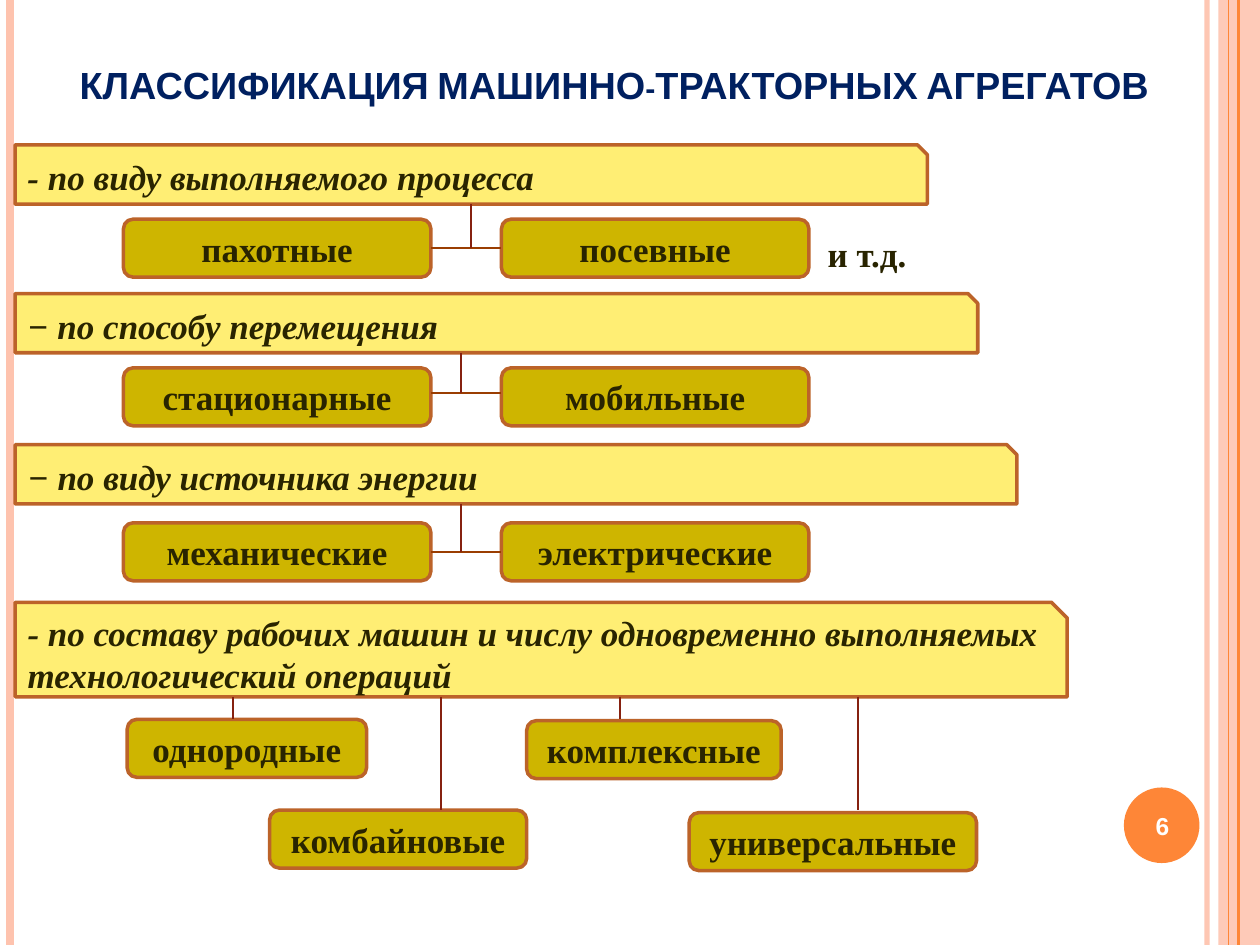
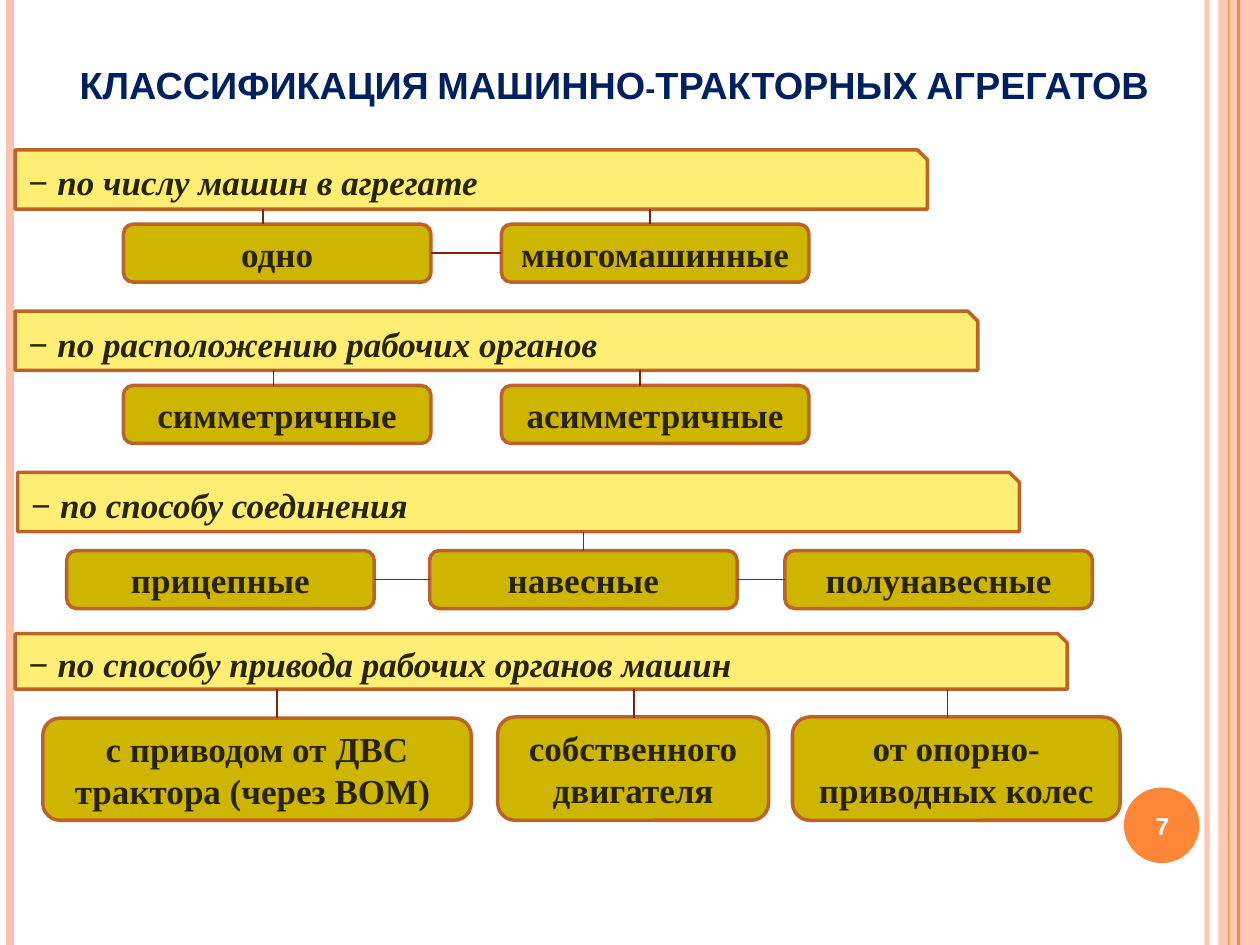
import pptx
import pptx.util
import pptx.dml.color
import pptx.enum.shapes
import pptx.enum.text
import pptx.oxml.ns
import lxml.etree

Inches = pptx.util.Inches
SHAPE = pptx.enum.shapes.MSO_SHAPE
ANCHOR = pptx.enum.text.MSO_ANCHOR
ALIGN = pptx.enum.text.PP_ALIGN
qn = pptx.oxml.ns.qn

# Shared style
PEACH, ORANGE, WHITE, NAVY = "FEC3AE", "FE8637", "FFFFFF", "002060"
BAR_FILL, KIND_FILL, BORDER, INK = "FFEE74", "CEB500", "BC6329", "292400"
STEM, BRIDGE = "862110", "9A3D01"
HEADING_FONT, BODY_FONT = "Arial", "Times New Roman"

TITLE = "КЛАССИФИКАЦИЯ МАШИННО-ТРАКТОРНЫХ АГРЕГАТОВ"
TITLE_BOX = (0.34, 0.03, 9.07, 0.87)
NUMBER_BOX = (8.89, 6.27, 0.67, 0.57)
SLIDE_W, SLIDE_H = 10, 7.5
KIND_W, KIND_H = 2.44, 0.46


def paint(color_format, hex_color, opacity=100):
    """Apply a hex colour, optionally translucent, to a solid fill or font."""
    color_format.rgb = pptx.dml.color.RGBColor.from_string(hex_color)


def paint_fill(fill, owner, hex_color, opacity=100):
    fill.solid()
    paint(fill.fore_color, hex_color)
    if opacity < 100:
        color = next(owner.iter(qn("a:srgbClr")))
        lxml.etree.SubElement(color, qn("a:alpha"), val=str(opacity * 1000))


def write(shape, text, size, font, hex_color, align=ALIGN.CENTER,
          italic=False, anchor=ANCHOR.MIDDLE, wrap=True):
    frame = shape.text_frame
    frame.text = text
    frame.word_wrap = wrap
    frame.vertical_anchor = anchor
    paragraph = frame.paragraphs[0]
    paragraph.alignment = align
    run = paragraph.runs[0]
    run.font.size = pptx.util.Pt(size)
    run.font.name = font
    run.font.bold = True
    run.font.italic = italic
    paint(run.font.color, hex_color)
    return run


def add_block(slide, preset, box, fill, border=None, opacity=100):
    block = slide.shapes.add_shape(preset, *map(Inches, box))
    block.shadow.inherit = False
    paint_fill(block.fill, block.element.spPr, fill, opacity)
    if border:
        paint(block.line.color, border)
        block.line.width = pptx.util.Pt(2)
    else:
        block.line.fill.background()
    return block


def add_line(slide, start, end, hex_color, width=1, opacity=100):
    line = slide.shapes.add_connector(
        pptx.enum.shapes.MSO_CONNECTOR.STRAIGHT, *map(Inches, start + end))
    line.line.width = pptx.util.Pt(width)
    properties = line.element.spPr
    paint_fill(line.line.fill, properties, hex_color, opacity)
    lxml.etree.SubElement(properties, qn("a:effectLst"))


def add_frame(slide, number):
    """Side stripes and the page number disc."""
    stripes = [(9.58, PEACH, 3, 93), (0.08, PEACH, 4.5, 100),
               (9.83, ORANGE, 1.5, 100), (9.75, ORANGE, 0.75, 100)]
    band_left = 9.67
    add_block(slide, SHAPE.RECTANGLE,
              (band_left, 0, SLIDE_W - band_left, SLIDE_H), PEACH, opacity=87)
    for x, color, width, opacity in stripes:
        add_line(slide, (x, 0), (x, SLIDE_H), color, width, opacity)
    add_block(slide, SHAPE.OVAL, (8.92, 6.25, 0.6, 0.6), ORANGE)
    page = slide.shapes.add_textbox(*map(Inches, NUMBER_BOX))
    write(page, str(number), 14, HEADING_FONT, WHITE)


def add_title(slide):
    title = slide.shapes.title
    title.left, title.top, title.width, title.height = map(Inches, TITLE_BOX)
    run = write(title, TITLE, 21.6, HEADING_FONT, NAVY, anchor=ANCHOR.BOTTOM)
    run.font._element.set("cap", "small")


def add_criterion(slide, box, heading, kinds, stems, bridge=None,
                  bridge_color=STEM):
    """A heading bar with its kinds; all offsets run from the bar's corner.

    kinds: (text, x, y, width, height); stems: (x, bottom); bridge: y.
    """
    left, top, _, height = box
    bar = add_block(slide, SHAPE.SNIP_1_RECTANGLE, box, BAR_FILL, BORDER)
    write(bar, heading, 20, BODY_FONT, INK, ALIGN.LEFT, italic=True)
    for text, x, y, kind_w, kind_h in kinds:
        kind = add_block(slide, SHAPE.ROUNDED_RECTANGLE,
                         (left + x, top + y, kind_w, kind_h), KIND_FILL, BORDER)
        write(kind, text, 20, BODY_FONT, INK)
    if bridge:
        for (_, x, _, kind_w, _), (_, next_x, *_) in zip(kinds, kinds[1:]):
            add_line(slide, (left + x + kind_w, top + bridge),
                     (left + next_x, top + bridge), bridge_color)
    for x, bottom in stems:
        add_line(slide, (left + x, top + height), (left + x, top + bottom), STEM)


def row(texts, y=0.59, first=0.86, step=3.0):
    """Equal kinds side by side."""
    return [(text, first + i * step, y, KIND_W, KIND_H)
            for i, text in enumerate(texts)]


def new_slide(deck, number):
    slide = deck.slides.add_slide(deck.slide_layouts[5])
    add_frame(slide, number)
    add_title(slide)
    return slide


def build_process_slide(deck):
    slide = new_slide(deck, 6)
    add_criterion(slide, (0.12, 1.15, 7.24, 0.47), "- по виду выполняемого процесса",
                  row(["пахотные", "посевные"]), [(3.62, 0.82)], 0.82, BRIDGE)
    others = slide.shapes.add_textbox(*map(Inches, (6.47, 1.8, 0.9, 0.44)))
    write(others, "и т.д.", 20, BODY_FONT, INK, ALIGN.LEFT,
          anchor=ANCHOR.TOP, wrap=False)
    add_criterion(slide, (0.12, 2.33, 7.64, 0.47), "− по способу перемещения",
                  row(["стационарные", "мобильные"]), [(3.54, 0.79)], 0.79, BRIDGE)
    add_criterion(slide, (0.12, 3.53, 7.95, 0.47), "− по виду источника энергии",
                  row(["механические", "электрические"], y=0.62),
                  [(3.54, 0.85)], 0.85, BRIDGE)
    add_criterion(slide, (0.12, 4.78, 8.35, 0.75),
                  "- по составу рабочих машин и числу одновременно выполняемых "
                  "технологический операций",
                  [("однородные", 0.89, 0.93, 1.9, KIND_H),
                   ("комплексные", 4.06, 0.94, 2.02, KIND_H),
                   ("комбайновые", 2.02, 1.65, 2.04, KIND_H),
                   ("универсальные", 5.35, 1.67, 2.28, KIND_H)],
                  [(1.73, 0.93), (4.8, 0.93), (3.38, 1.65), (6.69, 1.65)])


def build_assembly_slide(deck):
    slide = new_slide(deck, 7)
    add_criterion(slide, (0.12, 1.19, 7.24, 0.47), "− по числу машин в агрегате",
                  row(["одно", "многомашинные"]),
                  [(1.97, 0.59), (5.04, 0.59)], 0.82)
    add_criterion(slide, (0.12, 2.47, 7.64, 0.47), "− по расположению рабочих органов",
                  row(["симметричные", "асимметричные"]),
                  [(2.05, 0.59), (4.96, 0.59)])
    add_criterion(slide, (0.14, 3.75, 7.95, 0.47), "− по способу соединения",
                  [("прицепные", 0.39, 0.62, KIND_W, KIND_H),
                   ("навесные", 3.27, 0.62, KIND_W, KIND_H),
                   ("полунавесные", 6.09, 0.62, KIND_W, KIND_H)],
                  [(4.49, 0.62)], 0.85)
    add_criterion(slide, (0.12, 5.03, 8.35, 0.44),
                  "− по способу привода рабочих органов машин",
                  [("с приводом от ДВС трактора (через ВОМ) ", 0.22, 0.67, 3.4, 0.81),
                   ("собственного двигателя", 3.83, 0.66, 2.15, 0.82),
                   ("от опорно-приводных колес", 6.17, 0.66, 2.6, 0.82)],
                  [(2.08, 0.67), (4.91, 0.67), (7.4, 0.67)])


def main():
    deck = pptx.Presentation()
    deck.slide_width, deck.slide_height = Inches(SLIDE_W), Inches(SLIDE_H)
    build_process_slide(deck)
    build_assembly_slide(deck)
    deck.save("out.pptx")


if __name__ == "__main__":
    main()
